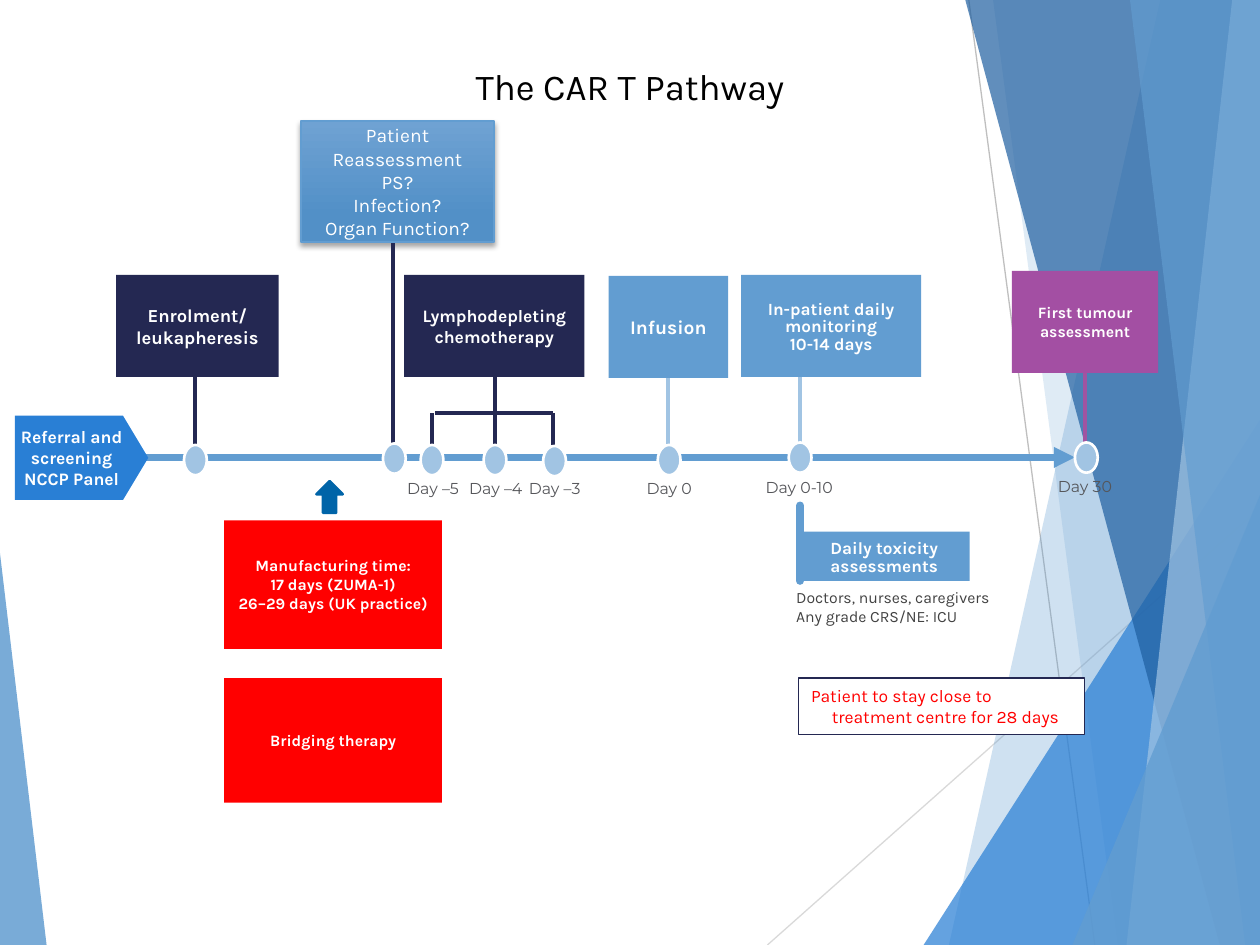
"""Builds the CAR T pathway timeline slide."""
import lxml.etree
import pptx
import pptx.dml.color
import pptx.enum.shapes
import pptx.enum.text
import pptx.oxml
import pptx.oxml.ns
import pptx.util

Cm = pptx.util.Cm
Pt = pptx.util.Pt
KIND = pptx.enum.shapes.MSO_SHAPE
SIDE = pptx.enum.text.PP_ALIGN
EDGE = pptx.enum.text.MSO_ANCHOR
qn = pptx.oxml.ns.qn

NAVY, BLUE, PALE = "242852", "629DD1", "A1C4E3"
DEEP, DARK, RED, WHITE = "297FD5", "1F5FA0", "FF0000", "FFFFFF"
WIDE, HIGH = 25.4, 19.05


def tint(code):
    return pptx.dml.color.RGBColor.from_string(code)


class Board:
    def __init__(self, deck):
        self.font = "Karla"
        self.slide = deck.slides.add_slide(deck.slide_layouts[5])
        self.shapes = self.slide.shapes

    def paint(self, shape, fill, edge=None, width=1.5, alpha=None):
        shape.shadow.inherit = False
        shape.fill.solid()
        shape.fill.fore_color.rgb = tint(fill)
        if alpha:
            node = shape._element.spPr.find(qn("a:solidFill"))[0]
            lxml.etree.SubElement(node, qn("a:alpha")).set("val", str(alpha * 1000))
        if edge:
            shape.line.color.rgb = tint(edge)
            shape.line.width = Pt(width)
        else:
            shape.line.fill.background()
        return shape

    def label(self, shape, text, size, color=WHITE, bold=False, font=None,
              side=SIDE.CENTER, edge=EDGE.MIDDLE, pad=(0.25, 0.13, 0.25, 0.13),
              lead=None, after=None):
        frame = shape.text_frame
        frame.word_wrap = True
        frame.vertical_anchor = edge
        (frame.margin_left, frame.margin_top,
         frame.margin_right, frame.margin_bottom) = [Cm(p) for p in pad]
        for i, row in enumerate(text.split("\n")):
            para = frame.add_paragraph() if i else frame.paragraphs[0]
            para.alignment = side
            if lead:
                para.line_spacing = lead
            if after:
                para.space_after = Pt(after)
            for j, part in enumerate(row.split("\v")):
                if j:
                    para.add_line_break()
                run = para.add_run()
                run.text = part
                run.font.name = font or self.font
                run.font.size = Pt(size)
                run.font.bold = bold
                run.font.color.rgb = tint(color)
        return shape

    def title(self, text, *box):
        shape = self.shapes.title
        shape.left, shape.top, shape.width, shape.height = [Cm(v) for v in box]
        self.label(shape, text, 36, "000000", edge=EDGE.TOP, pad=(0.25, 0.25, 0.25, 0.13))
        run = shape.text_frame.paragraphs[0].runs[0]
        run._r.get_or_add_rPr().set("baseline", "30000")

    def form(self, kind, box, fill, edge=None, width=1.5, alpha=None, adj=None):
        shape = self.shapes.add_shape(kind, *[Cm(v) for v in box])
        if adj is not None:
            shape.adjustments[0] = adj
        return self.paint(shape, fill, edge, width, alpha)

    def box(self, text, spot, fill, size, **style):
        return self.label(self.form(KIND.RECTANGLE, spot, fill), text, size, bold=True, **style)

    def band(self, top, low, fill, alpha):
        pts = [(Cm(x), Cm(y)) for x, y in ((top, 0), (WIDE, 0), (WIDE, HIGH), (low, HIGH))]
        pen = self.shapes.build_freeform(*pts[0], scale=1.0)
        pen.add_line_segments(pts[1:], close=True)
        self.paint(pen.convert_to_shape(), fill, alpha=alpha)

    def line(self, x1, y1, x2, y2, color, width=2.25, head=False, cap=False):
        kind = pptx.enum.shapes.MSO_CONNECTOR.STRAIGHT
        wire = self.shapes.add_connector(kind, Cm(x1), Cm(y1), Cm(x2), Cm(y2))
        wire.line.color.rgb = tint(color)
        wire.line.width = Pt(width)
        props = wire._element.spPr
        edge = props.find(qn("a:ln"))
        if cap:
            edge.set("cap", "rnd")
        if head:
            lxml.etree.SubElement(edge, qn("a:tailEnd")).set("type", "triangle")
        lxml.etree.SubElement(props, qn("a:effectLst"))

    def note(self, text, box, size, color, **style):
        shape = self.shapes.add_textbox(*[Cm(v) for v in box])
        return self.label(shape, text, size, color, edge=EDGE.TOP, **style)

    def card(self, text, spot):
        shape = self.form(KIND.RECTANGLE, spot, BLUE, BLUE, 1)
        shape.fill.gradient()
        shape.fill.gradient_angle = 270
        for stop, (place, color) in zip(shape.fill.gradient_stops, ((0, "6FA2D3"), (0.78, "5290C7"))):
            stop.position = place
            stop.color.rgb = tint(color)
        glow = shape._element.spPr.find(qn("a:effectLst"))
        cast = lxml.etree.SubElement(glow, qn("a:outerShdw"), blurRad=str(Pt(3)),
                                     dist=str(Pt(2)), dir="5400000", rotWithShape="0")
        hue = lxml.etree.SubElement(cast, qn("a:srgbClr"), val="000000")
        lxml.etree.SubElement(hue, qn("a:alpha"), val="35000")
        self.label(shape, text, 11)


def main():
    deck = pptx.Presentation()
    deck.slide_width, deck.slide_height = Cm(WIDE), Cm(HIGH)
    b = Board(deck)

    b.line(19.53, 0, 22.07, HIGH, "BFBFBF", 0.75)
    b.line(WIDE, 10.24, 15.47, HIGH, "D9D9D9", 0.75)
    b.band(23.39, 19.13, BLUE, 30)
    b.band(20.02, 22.53, BLUE, 20)
    b.form(KIND.ISOSCELES_TRIANGLE, (18.62, 8.46, 6.78, 10.59), DEEP, alpha=72, adj=1)
    b.band(19.46, 24.59, DARK, 70)
    b.band(24.84, 22.71, PALE, 70)
    b.band(22.78, 25.1, BLUE, 65)
    b.form(KIND.ISOSCELES_TRIANGLE, (21.62, 9.98, 3.78, 9.07), BLUE, alpha=80, adj=1)
    b.form(KIND.ISOSCELES_TRIANGLE, (0, 11.15, 0.94, 7.9), BLUE, alpha=85, adj=0)

    b.title("The CAR T Pathway", 1.27, 0.89, 22.86, 2.46)
    b.card("Patient Reassessment\nPS?\nInfection?\nOrgan Function?", (6.07, 2.44, 3.89, 2.44))

    b.line(0.84, 9.22, 21.67, 9.22, BLUE, 4, head=True)
    for x, top, low, color in (
            (3.94, 7.21, 9.17, NAVY), (7.92, 4.9, 9.07, NAVY), (9.97, 7.57, 9.27, NAVY),
            (8.71, 8.33, 8.97, NAVY), (11.15, 8.33, 9.04, NAVY), (13.46, 7.62, 8.97, PALE),
            (16.13, 7.6, 8.92, PALE), (21.87, 7.52, 8.99, "A054A1")):
        b.line(x, top, x, low, color)
    b.line(11.15, 8.33, 8.76, 8.33, NAVY)
    b.line(16.13, 10.19, 16.13, 11.71, BLUE, 4.5, cap=True)

    for x, y in ((3.71, 8.97), (7.72, 8.94), (8.48, 8.97), (9.75, 8.97),
                 (10.95, 8.99), (13.26, 8.97), (15.9, 8.92), (21.67, 8.92)):
        b.form(KIND.OVAL, (x, y, 0.46, 0.61), PALE, WHITE)

    for text, x, y, w in (
            ("Day –5", 8.08, 9.7, 1.3), ("Day –4", 9.22, 9.7, 1.55), ("Day –3", 10.62, 9.7, 1.12),
            ("Day 0", 12.93, 9.7, 1.12), ("Day 0-10", 15.21, 9.68, 1.8), ("Day 30", 21.26, 9.65, 1.22)):
        b.note(text, (x, y, w, 0.48), 9, "55565A", font="Montserrat", pad=(0, 0, 0, 0), lead=0.9, after=5)

    tight = {"pad": (0, 0.2, 0, 0.13), "lead": 0.85}
    b.box("Enrolment/\vleukapheresis", (2.34, 5.54, 3.28, 2.06), NAVY, 10.5)
    b.box("Lymphodepleting chemotherapy", (8.15, 5.54, 3.63, 2.06), NAVY, 10)
    b.box("Infusion", (12.27, 5.56, 2.41, 2.06), BLUE, 11, **tight)
    b.box("In-patient daily monitoring\n10-14 days", (14.94, 5.54, 3.63, 2.06), BLUE, 9.8, **tight)
    b.box("First tumour assessment", (20.4, 5.46, 2.95, 2.06), "A34FA3", 9)
    b.box("Daily toxicity assessments", (16.1, 10.72, 3.45, 0.99), BLUE, 9.8, **tight)
    b.box("Manufacturing time:\n17 days (ZUMA-1)\n26–29 days (UK practice)", (4.52, 10.49, 4.39, 2.59), RED, 9)
    b.box("Bridging therapy", (4.52, 13.67, 4.39, 2.51), RED, 9)

    start = b.form(KIND.PENTAGON, (0.3, 8.38, 2.69, 1.7), DEEP, adj=0.3)
    b.label(start, "Referral and screening\nNCCP Panel", 10, bold=True, pad=(0.1, 0.13, 0.25, 0.13))
    b.form(KIND.UP_ARROW, (6.38, 9.7, 0.53, 0.64), "0064A8", "0064A8")

    b.note("Doctors, nurses, caregivers\nAny grade CRS/NE: ICU", (16.05, 11.71, 4.65, 1.02),
           9, "424242", side=SIDE.LEFT, pad=(0, 0.13, 0.25, 0.13))
    stay = b.form(KIND.RECTANGLE, (16.1, 13.67, 5.77, 1.14), WHITE, NAVY, 0.75)
    b.label(stay, "Patient to stay close to\vtreatment centre for 28 days", 10, RED,
            side=SIDE.LEFT, edge=EDGE.TOP)
    props = stay.text_frame.paragraphs[0]._p.get_or_add_pPr()
    props.set("marL", str(Cm(0.42)))
    props.set("indent", str(-Cm(0.42)))

    deck.save("out.pptx")


if __name__ == "__main__":
    main()
